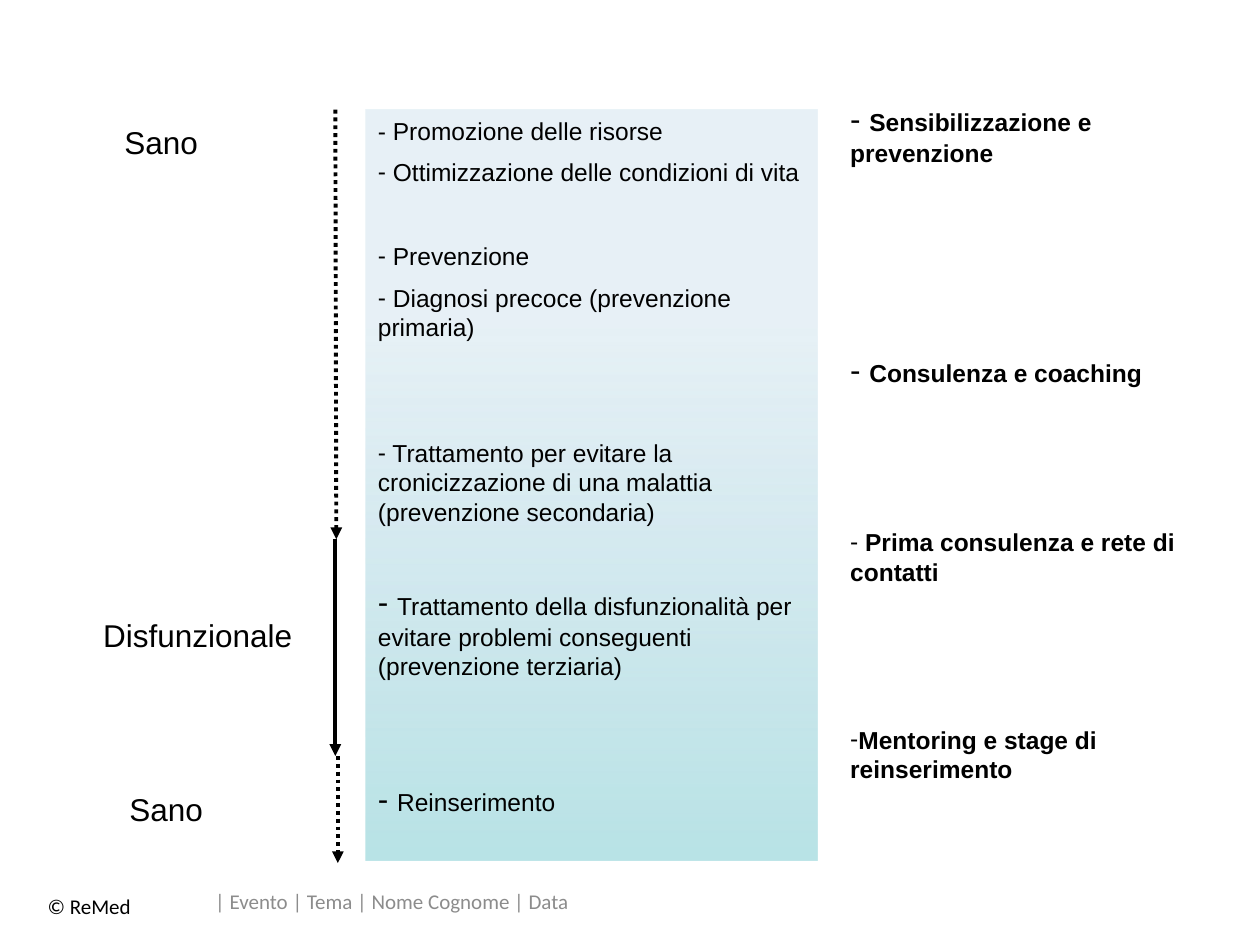
from dataclasses import dataclass

from lxml.etree import SubElement
from pptx import Presentation
from pptx.dml.color import RGBColor
from pptx.enum.dml import MSO_LINE
from pptx.enum.shapes import MSO_CONNECTOR, MSO_SHAPE
from pptx.enum.text import MSO_ANCHOR, PP_ALIGN
from pptx.oxml.ns import qn
from pptx.util import Cm, Pt


@dataclass(frozen=True)
class Theme:
    """Hold the colours, fonts and type sizes of the slide."""
    ink: RGBColor = RGBColor(0, 0, 0)
    muted: RGBColor = RGBColor(0x8C, 0x8C, 0x8C)
    pale: RGBColor = RGBColor(0xBE, 0xDA, 0xE7)
    teal: RGBColor = RGBColor(0xB8, 0xE3, 0xE6)
    body_font: str = "Arial"
    footer_font: str = "Calibri"
    label_size: int = 18
    item_size: int = 14
    footer_size: int = 12
    line_width: float = 2.25


THEME = Theme()

MEASURES = [
    ("- Promozione delle risorse", dict()),
    (" Ottimizzazione delle condizioni di vita", dict(bullet=True, before=7)),
    (" Prevenzione", dict(bullet=True, before=31)),
    (" Diagnosi precoce (prevenzione primaria)", dict(bullet=True, before=7)),
    (" Trattamento per evitare la cronicizzazione di una malattia (prevenzione secondaria)",
     dict(bullet=True, before=55)),
    ("Trattamento della disfunzionalità per evitare problemi conseguenti (prevenzione terziaria)",
     dict(bullet=True, big_lead=True, before=33)),
    ("Reinserimento", dict(bullet=True, big_lead=True, before=57)),
]
SERVICES = [
    ("Sensibilizzazione e prevenzione", dict(big_lead=True)),
    ("Consulenza e coaching", dict(big_lead=True, before=105)),
    (" Prima consulenza e rete di contatti", dict(before=79)),
    ("Mentoring e stage di reinserimento", dict(before=79)),
]
STATES = [("Sano", 2.26, 2.36, 3.18), ("Disfunzionale", 1.83, 12.29, 4.95),
          ("Sano", 2.36, 15.8, 3.18)]
PHASES = [(6.76, 2.21, 6.78, 10.87, True), (6.76, 10.87, 6.76, 15.24, False),
          (6.81, 15.24, 6.81, 17.4, True)]


def write_run(paragraph, text, size=THEME.item_size, bold=False,
              font=THEME.body_font, color=THEME.ink):
    """Add one formatted run to a paragraph."""
    run = paragraph.add_run()
    run.text = text
    run.font.size = Pt(size)
    run.font.bold = bold
    run.font.name = font
    run.font.color.rgb = color


def write_paragraph(frame, text, bullet=False, big_lead=False, before=0, **style):
    """Write text into the empty first paragraph or into a new one."""
    first = frame.paragraphs[0]
    paragraph = frame.add_paragraph() if first.runs else first
    if bullet:
        properties = paragraph._p.get_or_add_pPr()
        properties.set("marL", "0")
        properties.set("indent", "0")
        SubElement(properties, qn("a:buFont")).set("typeface", THEME.body_font)
        SubElement(properties, qn("a:buChar")).set("char", "-")
    paragraph.alignment = PP_ALIGN.LEFT
    if before:
        paragraph.space_before = Pt(before)
    if big_lead:
        write_run(paragraph, " ", size=THEME.label_size)
    write_run(paragraph, text, **style)


def add_text(slide, left, top, width, height, items, anchor=MSO_ANCHOR.TOP):
    """Add a wrapping text box holding the given paragraphs."""
    frame = slide.shapes.add_textbox(Cm(left), Cm(top), Cm(width), Cm(height)).text_frame
    frame.word_wrap = True
    frame.vertical_anchor = anchor
    for text, style in items:
        write_paragraph(frame, text, **style)


def add_measures_panel(slide):
    """Add the gradient panel listing the measures."""
    panel = slide.shapes.add_shape(MSO_SHAPE.RECTANGLE, Cm(7.37), Cm(2.21), Cm(9.12), Cm(15.14))
    panel.shadow.inherit = False
    panel.line.fill.background()
    panel.fill.gradient()
    panel.fill.gradient_angle = 270
    start, end = panel.fill.gradient_stops
    start.position, end.position = 0.29, 1
    start.color.rgb, end.color.rgb = THEME.pale, THEME.teal
    pale = next(panel._element.spPr.iter(qn("a:srgbClr")))
    SubElement(pale, qn("a:alpha")).set("val", "37000")
    frame = panel.text_frame
    frame.word_wrap = True
    frame.vertical_anchor = MSO_ANCHOR.TOP
    for text, style in MEASURES:
        write_paragraph(frame, text, **style)


def add_phase_arrow(slide, x1, y1, x2, y2, dotted):
    """Add one arrow of the health timeline."""
    arrow = slide.shapes.add_connector(MSO_CONNECTOR.STRAIGHT, Cm(x1), Cm(y1), Cm(x2), Cm(y2))
    arrow.line.color.rgb = THEME.ink
    arrow.line.width = Pt(THEME.line_width)
    if dotted:
        arrow.line.dash_style = MSO_LINE.ROUND_DOT
    SubElement(arrow.line._get_or_add_ln(), qn("a:tailEnd")).set("type", "triangle")
    SubElement(arrow._element.spPr, qn("a:effectLst"))


def main():
    """Build and save the slide."""
    deck = Presentation()
    deck.slide_width, deck.slide_height = Cm(25.4), Cm(19.05)
    slide = deck.slides.add_slide(deck.slide_layouts[6])
    footer = dict(font=THEME.footer_font, size=THEME.footer_size)
    add_text(slide, 4.09, 17.65, 12.62, 1.02,
             [("| Evento | Tema | Nome Cognome | Data", dict(footer, color=THEME.muted))],
             anchor=MSO_ANCHOR.MIDDLE)
    for state, left, top, width in STATES:
        add_text(slide, left, top, width, 1.04, [(state, dict(size=THEME.label_size))])
    for phase in PHASES:
        add_phase_arrow(slide, *phase)
    add_measures_panel(slide)
    services = [(text, dict(style, bullet=True, bold=True)) for text, style in SERVICES]
    add_text(slide, 16.89, 1.9, 8.2, 15.65, services)
    add_text(slide, 0.71, 17.88, 3.4, 0.76, [("© ReMed", footer)])
    deck.save("out.pptx")


if __name__ == "__main__":
    main()
